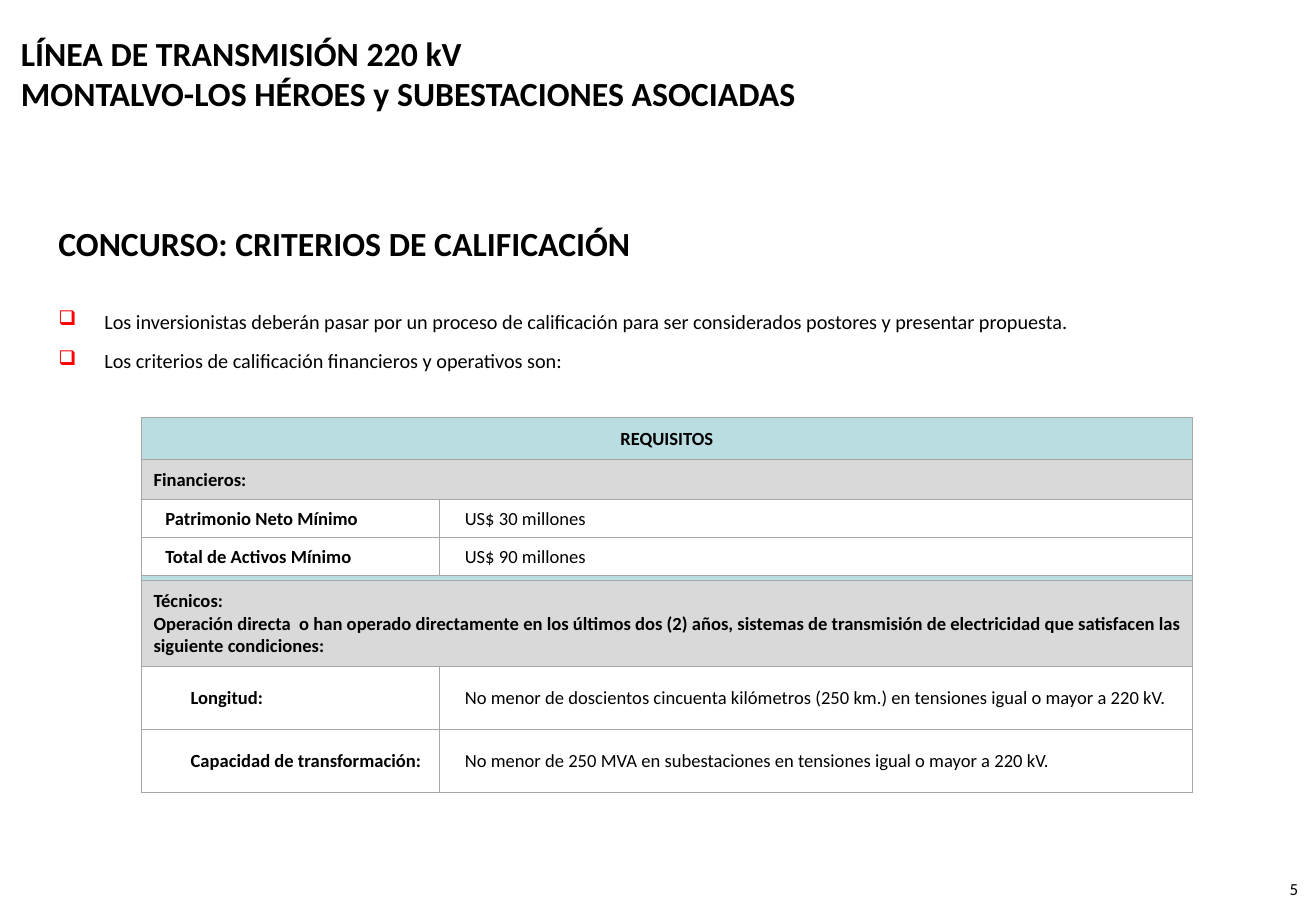
import pptx
import pptx.util
import pptx.dml.color
import pptx.enum.text
import lxml.etree

# Content
TITLE = ["LÍNEA DE TRANSMISIÓN 220 kV",
         "MONTALVO-LOS HÉROES y SUBESTACIONES ASOCIADAS"]
HEADING = ["CONCURSO: CRITERIOS DE CALIFICACIÓN"]
POINTS = [
    "Los inversionistas deberán pasar por un proceso de calificación"
    " para ser considerados postores y presentar propuesta.",
    "Los criterios de calificación financieros y operativos son:",
]
NUMBER = ["5"]

# Each row: height, fill, left inset, label lines, value (None: merged row)
ROWS = [
    (25, "BADDE1", 0.5, ["REQUISITOS"], None),
    (23.5, "D9D9D9", 7.5, ["Financieros:"], None),
    (22.5, None, 14.5, ["Patrimonio Neto Mínimo"], "US$ 30 millones"),
    (22.5, None, 14.5, ["Total de Activos Mínimo"], "US$ 90 millones"),
    (3, "BADDE1", 0, [], None),
    (51, "D9D9D9", 7.5, [
        "Técnicos:",
        "Operación directa  o han operado directamente en los últimos dos (2)"
        " años, sistemas de transmisión de electricidad que satisfacen las"
        " siguiente condiciones:"], None),
    (37.5, None, 29.5, ["Longitud:"],
     "No menor de doscientos cincuenta kilómetros (250 km.)"
     " en tensiones igual o mayor a 220 kV."),
    (37.5, None, 29.5, ["Capacidad de transformación:"],
     "No menor de 250 MVA en subestaciones en tensiones igual o mayor a 220 kV."),
]
COLS = [177, 446.5]

Pt = pptx.util.Pt
ALIGN = pptx.enum.text.PP_ALIGN
ANCHOR = pptx.enum.text.MSO_ANCHOR


def color(value):
    return pptx.dml.color.RGBColor.from_string(value)


def assign(item, values):
    for name, value in values.items():
        setattr(item, name, value)


def add_xml(parent, tag, **attrs):
    name = pptx.oxml.ns.qn("a:" + tag)
    return lxml.etree.SubElement(parent, name, attrs)


def write(frame, lines, size, bold=False, align=ALIGN.LEFT, bullet=None):
    for i, line in enumerate(lines):
        para = frame.paragraphs[0] if i == 0 else frame.add_paragraph()
        if bullet:
            props = para._p.get_or_add_pPr()
            assign_indent = str(Pt(27.3))
            props.set("marL", assign_indent)
            props.set("indent", "-" + assign_indent)
            add_xml(add_xml(props, "buClr"), "srgbClr", val="FF0000")
            add_xml(props, "buChar", char=bullet)
        assign(para, {"alignment": align, "space_before": Pt(0),
                      "space_after": Pt(9 if bullet else 0)})
        run = para.add_run()
        run.text = line
        assign(run.font, {"name": "Calibri", "size": Pt(size), "bold": bold})
        run.font.color.rgb = color("000000")


def add_box(slide, place, lines, size, anchor=ANCHOR.TOP, **style):
    frame = slide.shapes.add_textbox(*map(Pt, place)).text_frame
    assign(frame, {"word_wrap": True, "vertical_anchor": anchor})
    write(frame, lines, size, **style)


def add_borders(cell):
    props = cell._tc.get_or_add_tcPr()
    for i, side in enumerate(("lnL", "lnR", "lnT", "lnB")):
        line = pptx.oxml.parse_xml(
            f'<a:{side} {pptx.oxml.ns.nsdecls("a")} w="{Pt(0.5)}"><a:solidFill>'
            f'<a:srgbClr val="A6A6A6"/></a:solidFill></a:{side}>')
        props.insert(i, line)


def format_cell(cell, fill, inset):
    assign(cell, {"margin_left": Pt(inset), "margin_right": Pt(0.5),
                  "margin_top": Pt(0.5), "margin_bottom": Pt(0),
                  "vertical_anchor": ANCHOR.MIDDLE})
    if fill:
        cell.fill.solid()
        cell.fill.fore_color.rgb = color(fill)
    else:
        cell.fill.background()
    add_borders(cell)


def add_grid(slide):
    width, height = sum(COLS), sum(row[0] for row in ROWS)
    shape = slide.shapes.add_table(len(ROWS), len(COLS), Pt(83.5), Pt(247.5),
                                   Pt(width), Pt(height))
    table = shape.table
    assign(table, {"first_row": False, "horz_banding": False})
    for col, size in zip(table.columns, COLS):
        col.width = Pt(size)
    for r, (tall, fill, inset, label, value) in enumerate(ROWS):
        table.rows[r].height = Pt(tall)
        left, right = table.cell(r, 0), table.cell(r, 1)
        format_cell(left, fill, inset)
        format_cell(right, fill, 15)
        if value is None:
            left.merge(right)
        else:
            write(right.text_frame, [value], 11)
        if label:
            align = ALIGN.CENTER if r == 0 else ALIGN.LEFT
            write(left.text_frame, label, 11, True, align)
        else:
            # Tiny text size keeps the divider row thin
            for cell in (left, right):
                add_xml(cell.text_frame.paragraphs[0]._p, "endParaRPr", sz="100")


def main():
    deck = pptx.Presentation()
    assign(deck, {"slide_width": Pt(780), "slide_height": Pt(540)})
    slide = deck.slides.add_slide(deck.slide_layouts[5])

    # Title
    title = slide.shapes.title
    assign(title, {"left": Pt(-2), "top": Pt(9.5),
                   "width": Pt(512), "height": Pt(67.5)})
    assign(title.text_frame, {"margin_left": Pt(14.4), "word_wrap": True,
                              "auto_size": pptx.enum.text.MSO_AUTO_SIZE.NONE,
                              "vertical_anchor": ANCHOR.MIDDLE})
    write(title.text_frame, TITLE, 20, True)

    # Heading, bullets, table and page number
    add_box(slide, (27.5, 122.5, 402, 43), HEADING, 20, ANCHOR.MIDDLE, bold=True)
    add_box(slide, (27.5, 179.5, 739.5, 60), POINTS, 12, bullet="❑")
    add_grid(slide)
    add_box(slide, (737.5, 517.5, 39, 23), NUMBER, 10, align=ALIGN.RIGHT)
    deck.save("out.pptx")


if __name__ == "__main__":
    main()
